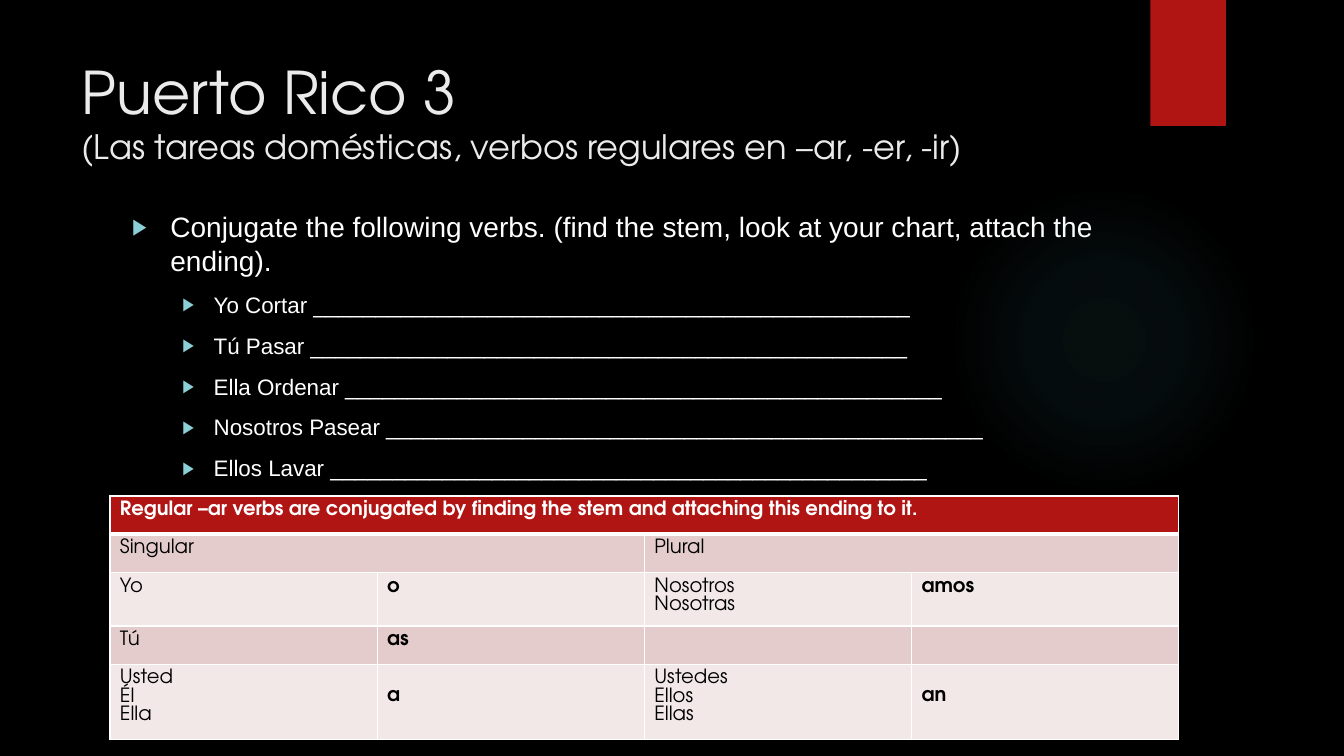
from lxml import etree
from pptx import Presentation
from pptx import util as u
from pptx.dml.color import RGBColor
from pptx.enum import shapes, text
from pptx.oxml import parse_xml
from pptx.oxml.ns import nsdecls, qn

BLACK = RGBColor(0x00, 0x00, 0x00)
WHITE = RGBColor(0xFF, 0xFF, 0xFF)
RED = RGBColor(0xB0, 0x15, 0x13)
TITLE_GREY = RGBColor(0xEB, 0xEB, 0xEB)
TEAL = RGBColor(0x50, 0xB9, 0xC1)
BULLET_TEAL = RGBColor(0x8A, 0xD0, 0xD6)
ROSE = RGBColor(0xE4, 0xCC, 0xCC)
PALE_ROSE = RGBColor(0xF2, 0xE8, 0xE7)

SUBJECTS = ["Yo Cortar", "Tú Pasar", "Ella Ordenar", "Nosotros Pasear", "Ellos Lavar"]
ENDINGS = [
    ["Regular –ar verbs are conjugated by finding the stem and attaching this ending to it.", "", "", ""],
    ["Singular", "", "Plural", ""],
    ["Yo", "o", "Nosotros\nNosotras", "amos"],
    ["Tú", "as", "", ""],
    ["Usted\nÉl\nElla", "a", "Ustedes\nEllos\nEllas", "an"],
]
ROW_HEIGHTS = [0.38, 0.38, 0.53, 0.38, 0.75]
ROW_FILLS = [RED, ROSE, PALE_ROSE, ROSE, PALE_ROSE]


class VerbSlide:
    heading_font = "TeX Gyre Adventor"
    body_font = "Arial"

    def __init__(self, presentation):
        self.slide = presentation.slides.add_slide(presentation.slide_layouts[1])
        self.slide.background.fill.solid()
        self.slide.background.fill.fore_color.rgb = BLACK

    def set_font(self, paragraph, name, size, color, bold=False):
        font = paragraph.font
        font.name, font.size, font.bold = name, u.Pt(size), bold
        font.color.rgb = color

    def place(self, shape, box):
        shape.left, shape.top, shape.width, shape.height = map(u.Inches, box)
        frame = shape.text_frame
        frame.word_wrap = True
        frame.auto_size = text.MSO_AUTO_SIZE.NONE
        frame.vertical_anchor = text.MSO_ANCHOR.TOP
        return frame

    def shape(self, kind, box, color):
        shape = self.slide.shapes.add_shape(kind, *map(u.Inches, box))
        shape.shadow.inherit = False
        shape.line.fill.background()
        shape.fill.solid()
        shape.fill.fore_color.rgb = color
        return shape

    def glow(self, box, color, stops):
        shape = self.shape(shapes.MSO_SHAPE.OVAL, box, color)
        stop_xml = "".join(
            f'<a:gs pos="{position * 1000}"><a:srgbClr val="{color}">'
            f'<a:alpha val="{alpha * 1000}"/></a:srgbClr></a:gs>'
            for position, alpha in stops)
        gradient = parse_xml(
            f'<a:gradFill {nsdecls("a")} rotWithShape="1"><a:gsLst>{stop_xml}</a:gsLst>'
            '<a:path path="circle"><a:fillToRect l="50000" t="50000" r="50000" b="50000"/>'
            '</a:path></a:gradFill>')
        properties = shape.element.spPr
        properties.replace(properties.find(qn("a:solidFill")), gradient)

    def title(self, box, heading, subtitle):
        paragraph = self.place(self.slide.shapes.title, box).paragraphs[0]
        paragraph.alignment = text.PP_ALIGN.LEFT
        self.set_font(paragraph, self.heading_font, 42, TITLE_GREY)
        paragraph.add_run().text = heading
        paragraph.add_line_break()
        run = paragraph.add_run()
        run.text = subtitle
        run.font.size = u.Pt(24)

    def bullet(self, paragraph, left, hanging):
        properties = paragraph._p.get_or_add_pPr()
        properties.set("marL", str(u.Inches(left)))
        properties.set("indent", str(-u.Inches(hanging)))
        color = etree.SubElement(properties, qn("a:buClr"))
        etree.SubElement(color, qn("a:srgbClr"), val=str(BULLET_TEAL))
        etree.SubElement(properties, qn("a:buSzPct"), val="80000")
        etree.SubElement(properties, qn("a:buFont"), typeface=self.body_font)
        etree.SubElement(properties, qn("a:buChar"), char="▶")

    def bullet_list(self, box, heading, items):
        frame = self.place(self.slide.placeholders[1], box)
        for index, line in enumerate([heading] + items):
            paragraph = frame.add_paragraph() if index else frame.paragraphs[0]
            paragraph.text = line
            paragraph.level = 1 if index else 0
            self.bullet(paragraph, *((0.81, 0.31) if index else (0.38, 0.38)))
            paragraph.space_before = u.Pt(10 if index else 0)
            self.set_font(paragraph, self.body_font, 16 if index else 20, WHITE)

    def cell_borders(self, cell, top, bottom):
        properties = cell._tc.get_or_add_tcPr()
        widths = {"lnL": 1, "lnR": 1, "lnT": top, "lnB": bottom}
        for index, (side, width) in enumerate(widths.items()):
            properties.insert(index, parse_xml(
                f'<a:{side} {nsdecls("a")} w="{u.Pt(width)}"><a:solidFill>'
                f'<a:srgbClr val="{WHITE}"/></a:solidFill></a:{side}>'))

    def table(self, left, top, width, values, heights, fills, spans):
        frame = self.slide.shapes.add_table(
            len(values), len(values[0]),
            *map(u.Inches, (left, top, width, sum(heights))))
        table = frame.table
        table.first_row = table.horz_banding = False
        for row_index, row in enumerate(values):
            table.rows[row_index].height = u.Inches(heights[row_index])
            for column_index, value in enumerate(row):
                cell = table.cell(row_index, column_index)
                cell.text = value
                cell.fill.solid()
                cell.fill.fore_color.rgb = fills[row_index]
                self.cell_borders(cell, 3 if row_index == 1 else 1, 3 if row_index == 0 else 1)
                is_ending = row_index > 1 and column_index % 2 == 1
                # Endings in the last row sit beside the second pronoun
                if is_ending and row_index == len(values) - 1:
                    cell.margin_top = u.Inches(0.23)
                for paragraph in cell.text_frame.paragraphs:
                    paragraph.line_spacing = u.Pt(13)
                    self.set_font(paragraph, self.heading_font, 14,
                                  BLACK if row_index else WHITE,
                                  bold=is_ending or row_index == 0)
        for row_index, first, last in spans:
            table.cell(row_index, first).merge(table.cell(row_index, last))


def main():
    presentation = Presentation()
    presentation.slide_width = u.Inches(13.33)
    presentation.slide_height = u.Inches(7.5)
    page = VerbSlide(presentation)

    # Title and list
    page.title((0.71, 0.5, 10.29, 1.53), "Puerto Rico 3",
               "(Las tareas domésticas, verbos regulares en –ar, -er, -ir)")
    page.bullet_list(
        (1.21, 2.03, 9.78, 4.81),
        "Conjugate the following verbs. (find the stem, look at your chart, attach the ending).",
        [f"{subject} {'_' * 48}" for subject in SUBJECTS])

    # Decoration
    page.glow((9.41, 1.83, 3.08, 3.08), TEAL, [(0, 7), (36, 6), (69, 0), (100, 0)])
    page.shape(shapes.MSO_SHAPE.RECTANGLE, (11.41, 0, 0.75, 1.25), RED)

    # Table of endings
    page.table(1.09, 4.92, 10.6, ENDINGS, ROW_HEIGHTS, ROW_FILLS,
               [(0, 0, 3), (1, 0, 1), (1, 2, 3)])

    presentation.save("out.pptx")


if __name__ == "__main__":
    main()
